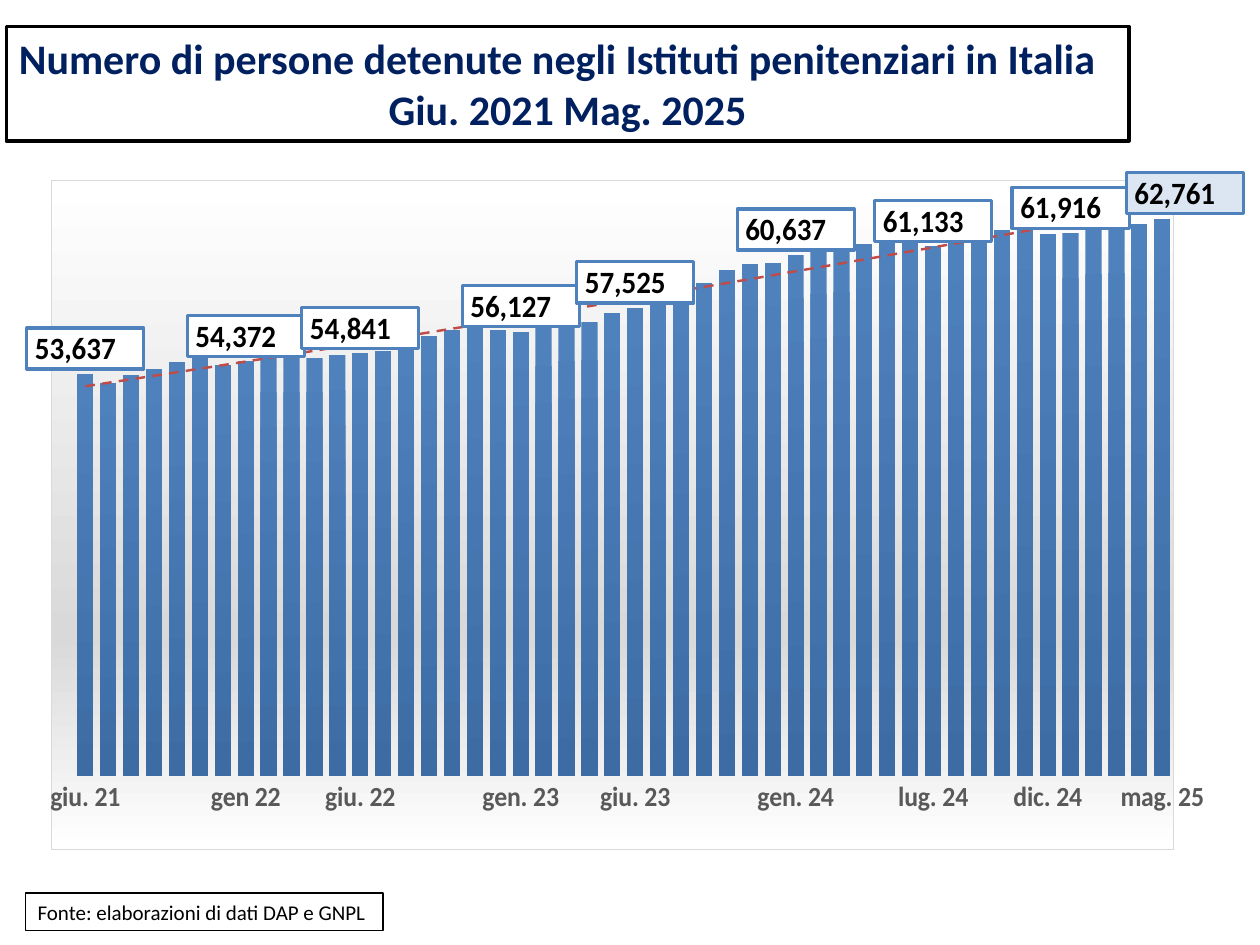
from lxml import etree
from pptx import Presentation, util as u
from pptx.chart.data import CategoryChartData
from pptx.dml.color import RGBColor
from pptx.enum import chart as ch, text
from pptx.oxml.ns import nsdecls, qn

W, H = 10, 7.5
FONT = "Calibri"
NUMBER = '_-* #,##0\\ _€_-;\\-* #,##0\\ _€_-;_-* "-"?'
DETAINEES = [
    53637, 53129, 53557, 53930, 54307, 54593, 54134, 54372, 54635, 54609, 54595, 54771,
    54841, 54979, 55637, 55835, 56225, 56524, 56196, 56127, 56319, 56605, 56674, 57230,
    57525, 57749, 58428, 58987, 59715, 60116, 60166, 60637, 60924, 61049, 61297, 61547,
    61480, 61133, 61758, 61862, 62110, 62464, 61861, 61916, 62165, 62281, 62445, 62761]
MONTHS = {0: "giu. 21", 7: "gen 22", 12: "giu. 22", 19: "gen. 23", 24: "giu. 23",
          31: "gen. 24", 37: "lug. 24", 42: "dic. 24", 47: "mag. 25"}
# Labelled month -> sideways shift as a share of the chart width
LABELS = {0: 0, 7: 0, 12: 0, 19: 0, 24: 0, 31: 0, 37: 0, 43: 0, 47: 0.02}


def rgb(value):
    return RGBColor.from_string(value)


def box(x, y, w, h):
    """Shares of the slide's size to lengths."""
    return [u.Inches(v) for v in (x * W, y * H, w * W, h * H)]


def style(font, color, **values):
    for name, value in {"name": FONT, **values}.items():
        setattr(font, name, value)
    font.color.rgb = rgb(color)


def xml(markup):
    """Parse one chart element, with the c and a prefixes declared."""
    return etree.fromstring(f'<c:x {nsdecls("c", "a")}>{markup}</c:x>')[0]


def solid(color):
    return f'<a:solidFill><a:srgbClr val="{color}"/></a:solidFill>'


def line(color, pt, extra=""):
    return f'<a:ln w="{int(u.Pt(pt))}">{solid(color)}{extra}</a:ln>'


def gradient(*stops):
    gs = "".join(f'<a:gs pos="{pos * 1000}"><a:srgbClr val="{c}"/></a:gs>' for pos, c in stops)
    return f'<a:gradFill><a:gsLst>{gs}</a:gsLst><a:lin ang="5400000" scaled="0"/></a:gradFill>'


def layout(inner="", **shares):
    parts = "".join(f'<c:{k} val="{v}"/>' for k, v in shares.items())
    return xml(f"<c:layout><c:manualLayout>{inner}{parts}</c:manualLayout></c:layout>")


def framed_text(sp, place, lines, border, color, **font):
    sp.left, sp.top, sp.width, sp.height = place
    sp.fill.solid()
    sp.fill.fore_color.rgb = rgb("FFFFFF")
    sp.line.color.rgb = rgb("000000")
    sp.line.width = u.Pt(border)
    tf = sp.text_frame
    for name, value in {"word_wrap": False, "vertical_anchor": text.MSO_ANCHOR.TOP,
                        "auto_size": text.MSO_AUTO_SIZE.SHAPE_TO_FIT_TEXT}.items():
        setattr(tf, name, value)
    for i, (words, align) in enumerate(lines):
        p = tf.paragraphs[0] if i == 0 else tf.add_paragraph()
        p.alignment = align
        p.space_before = u.Pt(0)
        r = p.add_run()
        r.text = words
        style(r.font, color, **font)


def value_label(series, index, shift, fill):
    label = series.points[index].data_label
    style(label.font, "000000", size=u.Pt(18), bold=True)
    label.position = ch.XL_LABEL_POSITION.OUTSIDE_END
    d = label._get_or_add_dLbl()
    if shift:
        d.find(qn("c:idx")).addnext(layout(x=shift, y=0))
    number = xml('<c:numFmt formatCode="" sourceLinked="0"/>')
    number.set("formatCode", NUMBER)
    txt = d.find(qn("c:txPr"))
    txt.addprevious(number)
    txt.addprevious(xml(f'<c:spPr>{solid(fill)}{line("4F81BD", 2)}</c:spPr>'))


def axes(chart):
    val, cat = chart.value_axis, chart.category_axis
    for axis, values in (
            (val, {"minimum_scale": 30000, "maximum_scale": 65000, "visible": False}),
            (cat, {"major_tick_mark": ch.XL_TICK_MARK.NONE,
                   "minor_tick_mark": ch.XL_TICK_MARK.NONE})):
        axis.has_major_gridlines = False
        for name, value in values.items():
            setattr(axis, name, value)
    cat.format.line.fill.background()
    style(cat.tick_labels.font, "595959", size=u.Pt(16), bold=True)
    # Keep every month label level and on one line
    cat._element.find(qn("c:txPr")).find(qn("a:bodyPr")).set("rot", "-60000000")
    cat._element.find(qn("c:noMultiLvlLbl")).addprevious(xml('<c:tickLblSkip val="1"/>'))


def column_chart(s, place):
    data = CategoryChartData(number_format=NUMBER)
    data.categories = [MONTHS.get(i, "") for i in range(len(DETAINEES))]
    data.add_series("Series 1", DETAINEES)
    chart = s.shapes.add_chart(ch.XL_CHART_TYPE.COLUMN_CLUSTERED, *place, data).chart
    chart.has_legend = chart.has_title = False
    style(chart.font, "000000", size=u.Pt(11))
    axes(chart)

    # Columns, value labels and trend line
    plot = chart.plots[0]
    plot.gap_width, plot.vary_by_categories = 41, False
    series = plot.series[0]
    series.format.fill.solid()
    sp_pr = series._element.find(qn("c:spPr"))
    sp_pr.replace(sp_pr[0], xml(gradient((0, "4F81BD"), (100, "3D6CA4"))))
    series.data_labels.show_value = False
    for i, shift in LABELS.items():
        value_label(series, i, shift, "DCE6F2" if shift else "FFFFFF")
    series._element.find(qn("c:cat")).addprevious(xml(
        f'<c:trendline><c:spPr>{line("BF4C48", 1.5, """<a:prstDash val="dash"/>""")}</c:spPr>'
        '<c:trendlineType val="poly"/><c:order val="2"/>'
        '<c:dispRSqr val="0"/><c:dispEq val="0"/></c:trendline>'))

    # Chart background and plot position
    root = chart._chartSpace
    back = gradient((0, "FFFFFF"), (68, "D9D9D9"), (100, "FFFFFF"))
    root.find(qn("c:chart")).addnext(xml(f'<c:spPr>{back}{line("D9D9D9", 0.75)}</c:spPr>'))
    area = root.find(".//" + qn("c:plotArea"))
    for old in area.findall(qn("c:layout")):
        area.remove(old)
    area.insert(0, layout('<c:layoutTarget val="inner"/><c:xMode val="edge"/>'
                          '<c:yMode val="edge"/>', x=0.02, y=0, w=0.98, h=0.89))


def main():
    prs = Presentation()
    prs.slide_width, prs.slide_height = u.Inches(W), u.Inches(H)
    s = prs.slides.add_slide(prs.slide_layouts[5])
    left, center = text.PP_ALIGN.LEFT, text.PP_ALIGN.CENTER

    # Title
    framed_text(s.shapes.title, box(0.005, 0.028, 0.891, 0.121),
                [("Numero di persone detenute negli Istituti penitenziari in Italia", left),
                 ("Giu. 2021 Mag. 2025", center)], 2, "002060", size=u.Pt(24), bold=True)
    # Source note
    place = box(0.02, 0.945, 0.284, 0.04)
    framed_text(s.shapes.add_textbox(*place), place,
                [("Fonte: elaborazioni di dati DAP e GNPL", left)], 0.75, "000000", size=u.Pt(12))
    # Chart
    column_chart(s, box(0.02, 0.181, 0.968, 0.719))
    prs.save("out.pptx")


if __name__ == "__main__":
    main()
